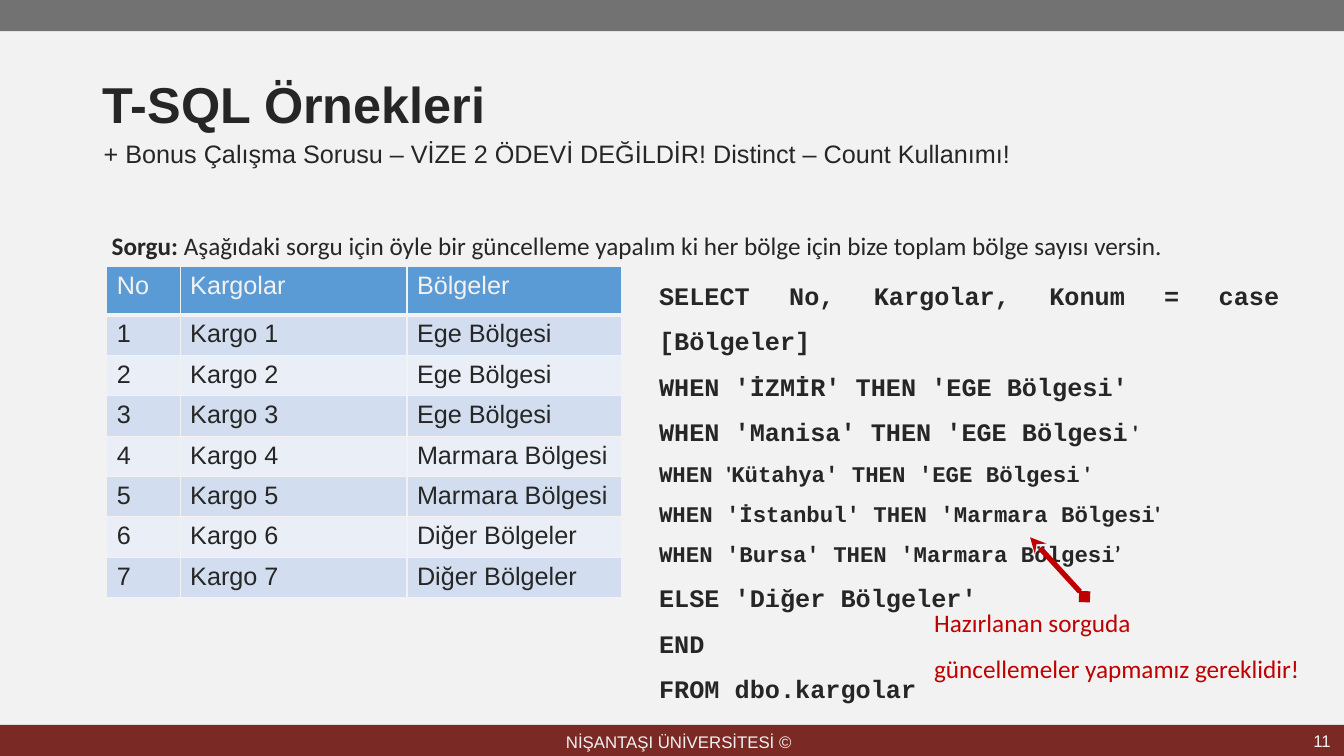
from lxml.etree import SubElement
from pptx import Presentation
from pptx.dml.color import RGBColor
from pptx.enum.shapes import MSO_CONNECTOR, MSO_SHAPE
from pptx.enum.text import MSO_ANCHOR, MSO_AUTO_SIZE, PP_ALIGN
from pptx.oxml.ns import qn
from pptx.util import Pt

COLORS = {
    "paper": "F2F2F2", "ink": "262626", "gray": "727272", "maroon": "7A2924",
    "header": "5B9BD5", "band_dark": "D2DEEF", "band_light": "EAEFF7", "red": "C00000",
}
REGIONS = ["Ege Bölgesi"] * 3 + ["Marmara Bölgesi"] * 2 + ["Diğer Bölgeler"] * 2
CARGO_ROWS = [("No", "Kargolar", "Bölgeler")] + [
    (str(number), f"Kargo {number}", region) for number, region in enumerate(REGIONS, 1)
]
CODE, PROSE = "Courier New", "Calibri"
QUERY_LINES = [
    (18, [("SELECT No, Kargolar, Konum = case [Bölgeler]", CODE, 18)]),
    (18, [("WHEN 'İZMİR' THEN 'EGE Bölgesi'", CODE, 18)]),
    (18, [("WHEN 'Manisa' THEN 'EGE Bölgesi", CODE, 18), (" '", PROSE, 16)]),
    (16, [("WHEN ", CODE, 16), ("'", PROSE, 16),
          ("Kütahya' THEN 'EGE Bölgesi", CODE, 16), (" '", PROSE, 16)]),
    (16, [("WHEN 'İstanbul' THEN 'Marmara Bölgesi", CODE, 16), ("'", PROSE, 16)]),
    (16, [("WHEN 'Bursa' THEN 'Marmara Bölgesi", CODE, 16), ("’", PROSE, 16)]),
    (18, [("ELSE 'Diğer Bölgeler'", CODE, 18)]),
    (18, [("END", CODE, 18)]),
    (18, [("FROM dbo.kargolar", CODE, 18)]),
]


def rgb(name):
    """Return the palette colour with this name."""
    return RGBColor.from_string(COLORS[name])


def style(font, size, color, face="Arial", bold=False):
    """Set size, colour, face and weight of a font."""
    font.size, font.name, font.bold = Pt(size), face, bold
    font.color.rgb = rgb(color)


def add_bar(slide, top, color):
    """Draw a full-width band."""
    bar = slide.shapes.add_shape(MSO_SHAPE.RECTANGLE, 0, Pt(top), Pt(960), Pt(22.3))
    bar.shadow.inherit = False
    bar.fill.solid()
    bar.fill.fore_color.rgb = rgb(color)
    bar.line.fill.background()


def add_text(slide, box, lines, size, color, face="Arial", align=PP_ALIGN.LEFT,
             spacing=1.0, anchor=MSO_ANCHOR.TOP):
    """Add a wrapped text box and return its paragraphs."""
    frame = slide.shapes.add_textbox(*map(Pt, box)).text_frame
    frame.word_wrap = True
    frame.vertical_anchor = anchor
    frame.text = "\n".join(lines)
    for paragraph in frame.paragraphs:
        paragraph.alignment, paragraph.line_spacing = align, spacing
        style(paragraph.font, size, color, face)
    return frame.paragraphs


def set_title(slide, text):
    """Place and format the slide title."""
    title = slide.shapes.title
    title.left, title.top, title.width, title.height = map(Pt, (66.2, 54.7, 837.4, 43.2))
    frame = title.text_frame
    frame.text = text
    frame.auto_size = MSO_AUTO_SIZE.NONE
    frame.vertical_anchor = MSO_ANCHOR.MIDDLE
    heading = frame.paragraphs[0]
    heading.alignment, heading.line_spacing = PP_ALIGN.LEFT, 0.9
    style(heading.font, 36, "ink", bold=True)


def set_borders(cell, widths):
    """Draw the given cell sides in the paper colour."""
    properties = cell._tc.get_or_add_tcPr()
    for side, width in widths.items():
        border = SubElement(properties, qn(f"a:{side}"), w=str(Pt(width)))
        SubElement(SubElement(border, qn("a:solidFill")), qn("a:srgbClr"), val=COLORS["paper"])


def add_cargo_table(slide):
    """Add the banded table of cargos and regions."""
    table = slide.shapes.add_table(
        len(CARGO_ROWS), 3, Pt(76.3), Pt(190.5), Pt(368), Pt(225.7)).table
    table.first_row = table.horz_banding = False
    for column, width in zip(table.columns, (52.4, 162, 153.4)):
        column.width = Pt(width)
    for index, values in enumerate(CARGO_ROWS):
        is_header = index == 0
        table.rows[index].height = Pt(34.6 if is_header else 27.3)
        fill = "header" if is_header else "band_dark" if index % 2 else "band_light"
        for cell, value in zip(table.rows[index].cells, values):
            cell.text = value
            style(cell.text_frame.paragraphs[0].font, 18, "paper" if is_header else "ink")
            set_borders(cell, {"lnL": 1, "lnR": 1, "lnT": 3 if index == 1 else 1,
                               "lnB": 3 if is_header else 1})
            cell.fill.solid()
            cell.fill.fore_color.rgb = rgb(fill)


def add_query(slide):
    """Add the SQL query with its mixed fonts."""
    paragraphs = add_text(slide, (463.7, 185.8, 457.2, 287.3), [""] * len(QUERY_LINES),
                          18, "ink", CODE, PP_ALIGN.JUSTIFY, 1.5)
    for paragraph, (size, pieces) in zip(paragraphs, QUERY_LINES):
        style(paragraph.font, size, "ink", CODE, True)
        for text, face, piece_size in pieces:
            run = paragraph.add_run()
            run.text = text
            if face != CODE:
                style(run.font, piece_size, "ink", face, True)


def add_arrow(slide):
    """Draw the red arrow from the note to the query."""
    arrow = slide.shapes.add_connector(
        MSO_CONNECTOR.STRAIGHT, Pt(735.8), Pt(383.8), Pt(774.7), Pt(426.2))
    arrow.line.color.rgb = rgb("red")
    arrow.line.width = Pt(3.75)
    outline = arrow.line._get_or_add_ln()
    SubElement(outline, qn("a:headEnd"), type="stealth")
    SubElement(outline, qn("a:tailEnd"), type="diamond")
    SubElement(arrow._element.spPr, qn("a:effectLst"))


def main():
    """Build and save the slide."""
    deck = Presentation()
    deck.slide_width, deck.slide_height = Pt(960), Pt(540)
    slide = deck.slides.add_slide(deck.slide_layouts[5])
    slide.background.fill.solid()
    slide.background.fill.fore_color.rgb = rgb("paper")

    add_bar(slide, 0, "gray")
    add_bar(slide, 517.7, "maroon")
    add_text(slide, (396.7, 517, 176.4, 25.2), ["NİŞANTAŞI ÜNİVERSİTESİ ©"], 12, "paper",
             align=PP_ALIGN.CENTER, anchor=MSO_ANCHOR.MIDDLE)
    add_text(slide, (735.8, 515.5, 221.8, 27.4), ["11"], 12, "paper",
             align=PP_ALIGN.RIGHT, anchor=MSO_ANCHOR.MIDDLE)

    set_title(slide, "T-SQL Örnekleri")
    add_text(slide, (67, 95, 668.9, 28.8),
             ["+ Bonus Çalışma Sorusu – VİZE 2 ÖDEVİ DEĞİLDİR! Distinct – Count Kullanımı!"],
             18, "ink", align=PP_ALIGN.JUSTIFY)
    add_cargo_table(slide)
    question = add_text(slide, (72.7, 149.8, 799.2, 36.7), ["Sorgu: "], 18, "ink", PROSE,
                        PP_ALIGN.JUSTIFY, 1.5)[0]
    question.runs[0].font.bold = True
    question.add_run().text = ("Aşağıdaki sorgu için öyle bir güncelleme yapalım ki "
                               "her bölge için bize toplam bölge sayısı versin.")
    add_query(slide)
    add_arrow(slide)
    add_text(slide, (660.2, 419.8, 281.5, 69.1),
             ["Hazırlanan sorguda", "güncellemeler yapmamız gereklidir!"],
             18, "red", PROSE, spacing=1.5)
    deck.save("out.pptx")


if __name__ == "__main__":
    main()
